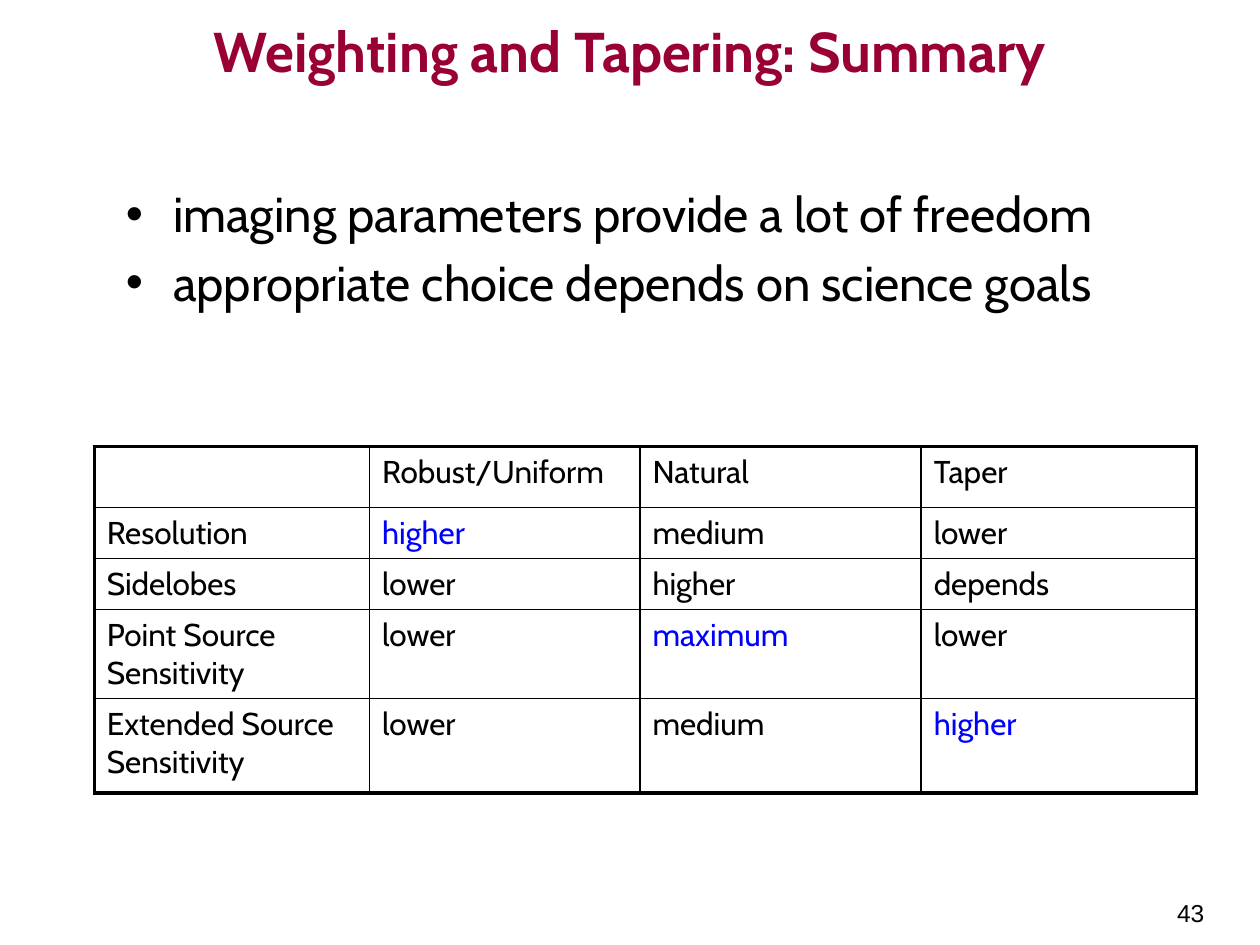
"""Build the summary slide on weighting and tapering."""
from lxml import etree
from pptx import Presentation
from pptx import util as u
from pptx.dml.color import RGBColor
from pptx.enum import text
from pptx.oxml.ns import qn

COLORS = {"title": "990033", "ink": "000000", "best": "0000FF"}
TITLE = "Weighting and Tapering: Summary"
BULLETS = [
    "imaging parameters provide a lot of freedom",
    "appropriate choice depends on science goals",
]
ROWS = [
    ["", "Robust/Uniform", "Natural", "Taper"],
    ["Resolution", "higher", "medium", "lower"],
    ["Sidelobes", "lower", "higher", "depends"],
    ["Point Source Sensitivity", "lower", "maximum", "lower"],
    ["Extended Source Sensitivity", "lower", "medium", "higher"],
]
BEST_CELLS = {(1, 1), (3, 2), (4, 3)}
COLUMN_WIDTHS = [5.55, 5.45, 5.67, 5.55]
ROW_HEIGHTS = [1.23, 1.03, 1.03, 1.79, 1.91]
PAGE_NUMBER = "43"


def format_paragraph(paragraph, size, color, font="Cabin", bold=False):
    for run in paragraph.runs:
        run.font.size = u.Pt(size)
        run.font.name = font
        run.font.bold = bold
        run.font.color.rgb = RGBColor.from_string(COLORS[color])


def add_text(slide, content, box, alignment=text.PP_ALIGN.LEFT, **style):
    frame = slide.shapes.add_textbox(*map(u.Cm, box)).text_frame
    frame.word_wrap = True
    frame.text = content
    for paragraph in frame.paragraphs:
        paragraph.alignment = alignment
        format_paragraph(paragraph, **style)
    return frame


def add_bullet(paragraph):
    properties = paragraph._p.get_or_add_pPr()
    properties.set("marL", str(u.Cm(0.95)))
    properties.set("indent", str(-u.Cm(0.95)))
    etree.SubElement(properties, qn("a:buFont"), typeface="Arial")
    etree.SubElement(properties, qn("a:buChar"), char="•")


def set_borders(cell, widths):
    properties = cell._tc.get_or_add_tcPr()
    for index, (side, width) in enumerate(widths.items()):
        line = etree.Element(qn(f"a:ln{side}"), w=str(u.Pt(width)))
        fill = etree.SubElement(line, qn("a:solidFill"))
        etree.SubElement(fill, qn("a:srgbClr"), val=COLORS["ink"])
        properties.insert(index, line)


def add_summary_table(slide):
    row_count, column_count = len(ROWS), len(COLUMN_WIDTHS)
    box = (1.9, 9, sum(COLUMN_WIDTHS), sum(ROW_HEIGHTS))
    table = slide.shapes.add_table(row_count, column_count, *map(u.Cm, box)).table
    table.first_row = table.horz_banding = False
    for column, width in zip(table.columns, COLUMN_WIDTHS):
        column.width = u.Cm(width)
    for r, (row, height) in enumerate(zip(ROWS, ROW_HEIGHTS)):
        table.rows[r].height = u.Cm(height)
        for c, label in enumerate(row):
            cell = table.cell(r, c)
            cell.text = label
            color = "best" if (r, c) in BEST_CELLS else "ink"
            format_paragraph(cell.text_frame.paragraphs[0], 18, color)
            cell.fill.background()
            outer = {"L": c == 0, "R": c == column_count - 1,
                     "T": r == 0, "B": r == row_count - 1}
            set_borders(cell, {side: 2.25 if edge else 1 for side, edge in outer.items()})


def main():
    presentation = Presentation()
    presentation.slide_width, presentation.slide_height = u.Cm(25.4), u.Cm(19.05)
    slide = presentation.slides.add_slide(presentation.slide_layouts[6])
    add_text(slide, TITLE, (1.9, 0.2, 21.6, 3.18), text.PP_ALIGN.CENTER,
             size=32, color="title", bold=True)
    body = add_text(slide, "\n".join(BULLETS), (2.29, 3.58, 21.6, 5),
                    size=28, color="ink")
    for index, paragraph in enumerate(body.paragraphs):
        if index:
            paragraph.space_before = u.Pt(5.6)
        add_bullet(paragraph)
    add_summary_table(slide)
    add_text(slide, PAGE_NUMBER, (19.25, 17.98, 5.28, 1.07), text.PP_ALIGN.RIGHT,
             size=14, color="ink", font="Arial")
    presentation.save("out.pptx")


if __name__ == "__main__":
    main()
